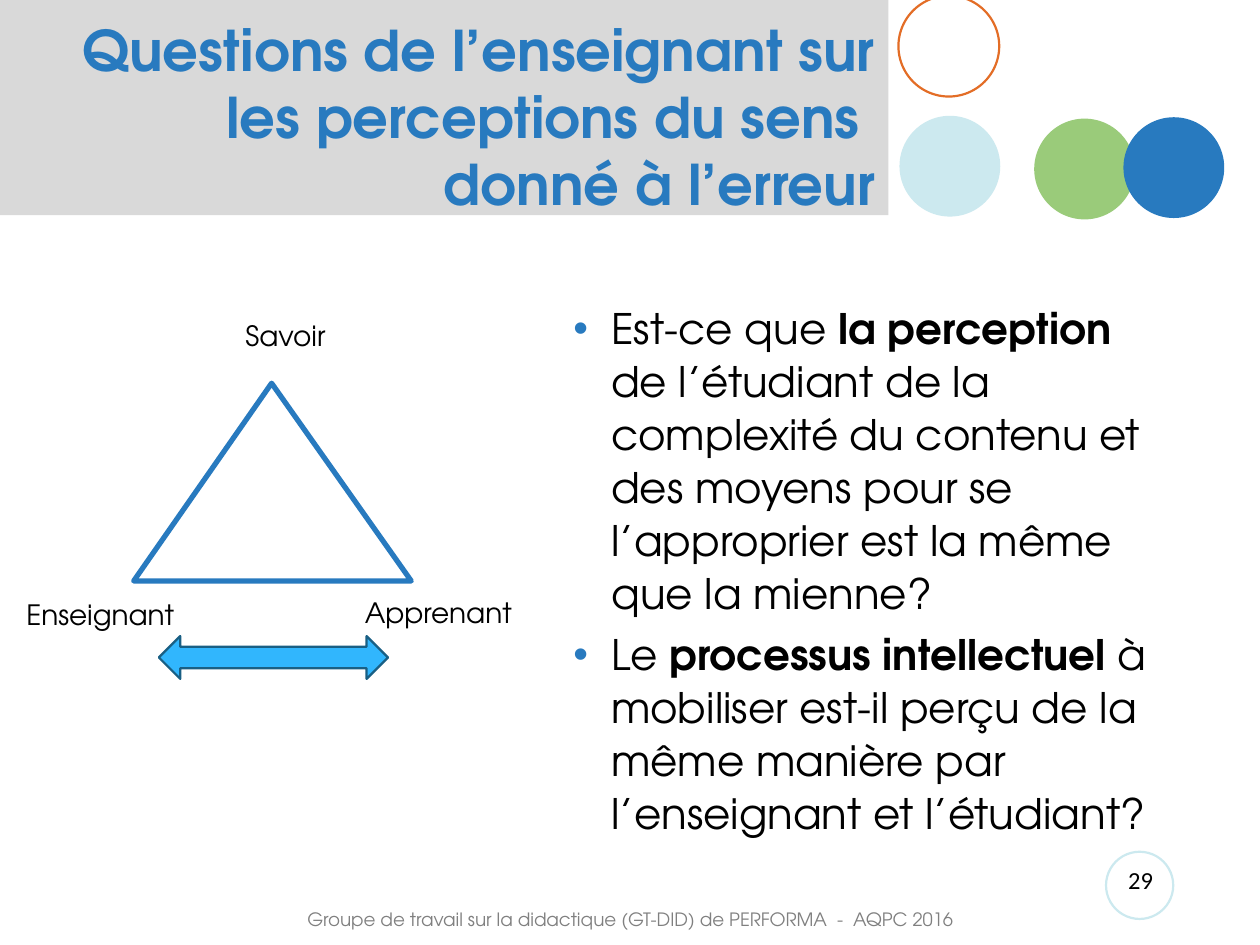
from dataclasses import dataclass

from lxml.etree import SubElement
from pptx import Presentation
from pptx.dml.color import RGBColor
from pptx.enum.shapes import MSO_SHAPE
from pptx.enum.text import MSO_ANCHOR, MSO_AUTO_SIZE, PP_ALIGN
from pptx.oxml.ns import qn
from pptx.util import Pt


@dataclass(frozen=True)
class Theme:
    font: str = "TeX Gyre Adventor"
    number_font: str = "Calibri"
    black: str = "000000"
    white: str = "FFFFFF"
    banner: str = "D9D9D9"
    footer: str = "808080"
    blue: str = "287ABF"
    green: str = "9ACB7A"
    pale: str = "CCE9EF"
    orange: str = "E36D26"
    arrow: str = "31B6FD"
    arrow_edge: str = "195F84"
    title_size: float = 32
    body_size: float = 24
    label_size: float = 16
    number_size: float = 14
    footer_size: float = 10.5


THEME = Theme()

TITLE = "Questions de l’enseignant sur les perceptions du sens \vdonné à l’erreur"
FOOTER = "Groupe de travail sur la didactique (GT-DID) de PERFORMA  -  AQPC 2016"
# Each question is a list of (text, bold) pieces.
QUESTIONS = [
    [("Est-ce que ", False), ("la perception ", True),
     ("de l’étudiant de la complexité du contenu et des moyens pour se "
      "l’approprier est la même que la mienne?", False)],
    [("Le ", False), ("processus intellectuel ", True),
     ("à mobiliser est-il perçu de la même manière par l’enseignant "
      "et l’étudiant?", False)],
]


def place(shape, left, top, width, height):
    shape.left, shape.top = Pt(left), Pt(top)
    shape.width, shape.height = Pt(width), Pt(height)


def write(paragraph, text, size, color=THEME.black, font=THEME.font,
          bold=False, align=PP_ALIGN.LEFT):
    """Append text to a paragraph; a vertical tab becomes a line break."""
    paragraph.alignment = align
    for index, line in enumerate(text.split("\v")):
        if index:
            paragraph.add_line_break()
        run = paragraph.add_run()
        run.text = line
        run.font.name = font
        run.font.size = Pt(size)
        run.font.bold = bold
        run.font.color.rgb = RGBColor.from_string(color)


def add_figure(slide, kind, box, fill=None, line=None, line_width=1.25):
    shape = slide.shapes.add_shape(kind, *map(Pt, box))
    shape.shadow.inherit = False
    if fill:
        shape.fill.solid()
        shape.fill.fore_color.rgb = RGBColor.from_string(fill)
    else:
        shape.fill.background()
    if line:
        shape.line.color.rgb = RGBColor.from_string(line)
        shape.line.width = Pt(line_width)
    else:
        shape.line.fill.background()
    return shape


def add_label(slide, box, text, size, wrap=False, **text_format):
    label = slide.shapes.add_textbox(*map(Pt, box))
    label.text_frame.word_wrap = wrap
    write(label.text_frame.paragraphs[0], text, size, **text_format)
    return label


def add_bullet(paragraph, indent=21.6):
    properties = paragraph._p.get_or_add_pPr()
    properties.set("marL", str(Pt(indent)))
    properties.set("indent", str(-Pt(indent)))
    color = SubElement(properties, qn("a:buClr"))
    SubElement(color, qn("a:srgbClr"), val=THEME.blue)
    SubElement(properties, qn("a:buFont"), typeface="Arial")
    SubElement(properties, qn("a:buChar"), char="•")


def add_decoration(slide):
    banner = add_figure(slide, MSO_SHAPE.RECTANGLE, (0, 0, 507.6, 123),
                        fill=THEME.banner)
    # The banner lies behind the title placeholder.
    slide.shapes._spTree.insert(2, banner._element)
    diameter = 57.6
    for left, top, fill, line in (
        (591, 67.8, THEME.green, None),
        (513.4, -2.4, None, THEME.orange),
        (514, 66.2, THEME.pale, None),
        (642, 67, THEME.blue, None),
    ):
        add_figure(slide, MSO_SHAPE.OVAL, (left, top, diameter, diameter),
                   fill=fill, line=line)


def fill_title(slide):
    title = slide.shapes.title
    place(title, 36, 9.4, 471.6, 113.8)
    frame = title.text_frame
    frame.auto_size = MSO_AUTO_SIZE.NONE
    frame.vertical_anchor = MSO_ANCHOR.MIDDLE
    write(frame.paragraphs[0], TITLE, THEME.title_size, color=THEME.blue,
          bold=True, align=PP_ALIGN.RIGHT)


def fill_questions(slide):
    body = slide.placeholders[1]
    place(body, 320.4, 168, 351.4, 316)
    frame = body.text_frame
    frame.auto_size = MSO_AUTO_SIZE.NONE
    for index, question in enumerate(QUESTIONS):
        paragraph = frame.add_paragraph() if index else frame.paragraphs[0]
        add_bullet(paragraph)
        paragraph.line_spacing = 1.05
        paragraph.space_before = Pt(4.8 if index else 0)
        for text, bold in question:
            write(paragraph, text, THEME.body_size, bold=bold)


def add_didactic_triangle(slide):
    triangle = add_figure(slide, MSO_SHAPE.ISOSCELES_TRIANGLE,
                          (76.4, 219, 158.6, 113), fill=THEME.white,
                          line=THEME.blue, line_width=3)
    triangle.adjustments[0] = 0.497
    for text, left, top, width in (
        ("Savoir", 133.2, 178.6, 61),
        ("Enseignant", 8, 337.8, 100),
        ("Apprenant", 201.4, 336.8, 100),
    ):
        add_label(slide, (left, top, width, 26.6), text, THEME.label_size)
    arrow = add_figure(slide, MSO_SHAPE.UP_DOWN_ARROW,
                       (144, 310.2, 24.5, 131), fill=THEME.arrow,
                       line=THEME.arrow_edge)
    arrow.rotation = 270


def add_footer(slide):
    add_figure(slide, MSO_SHAPE.OVAL, (632, 486.7, 38.4, 38.4), line=THEME.pale)
    add_label(slide, (632, 491, 39.6, 28.8), "29", THEME.number_size, wrap=True,
              font=THEME.number_font, align=PP_ALIGN.CENTER)
    add_label(slide, (168.5, 515.5, 423.4, 20.9), FOOTER, THEME.footer_size,
              wrap=True, color=THEME.footer)


def main():
    presentation = Presentation()
    presentation.slide_width, presentation.slide_height = Pt(720), Pt(540)
    slide = presentation.slides.add_slide(presentation.slide_layouts[1])
    add_decoration(slide)
    fill_title(slide)
    fill_questions(slide)
    add_didactic_triangle(slide)
    add_footer(slide)
    presentation.save("out.pptx")


if __name__ == "__main__":
    main()
